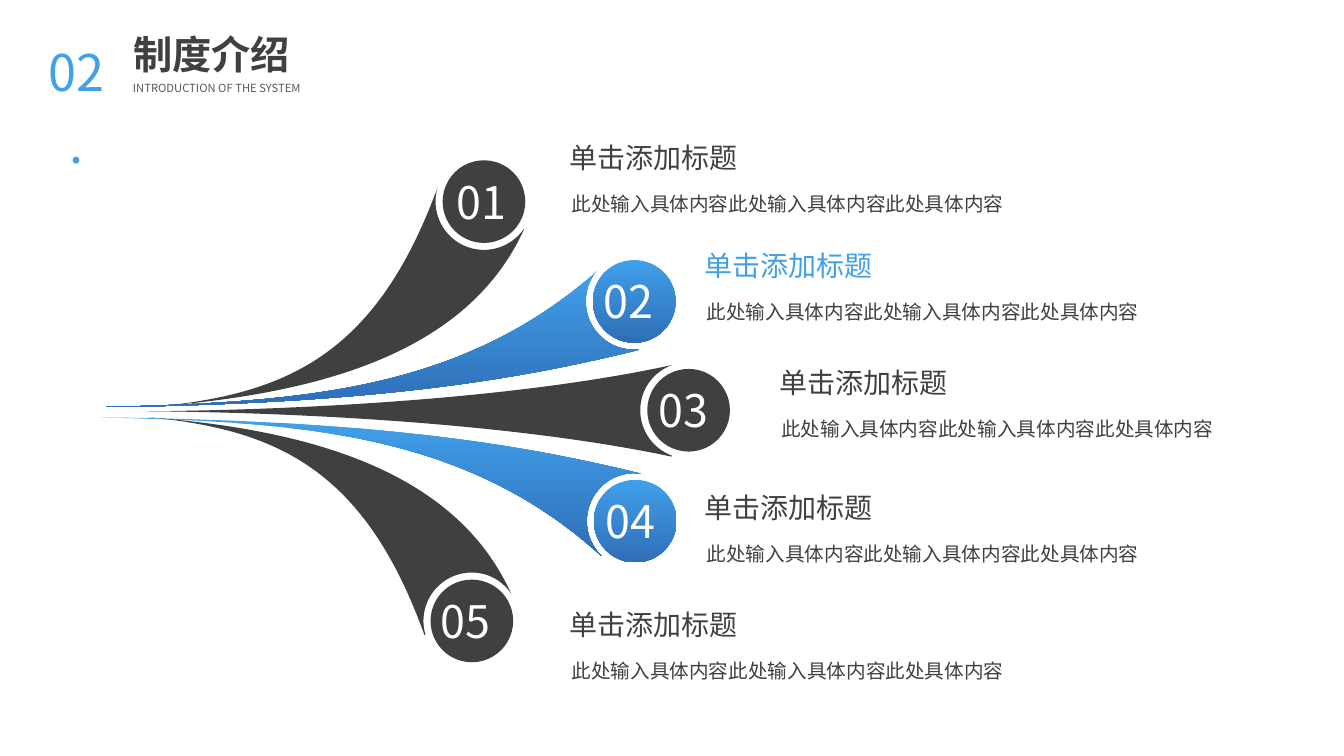
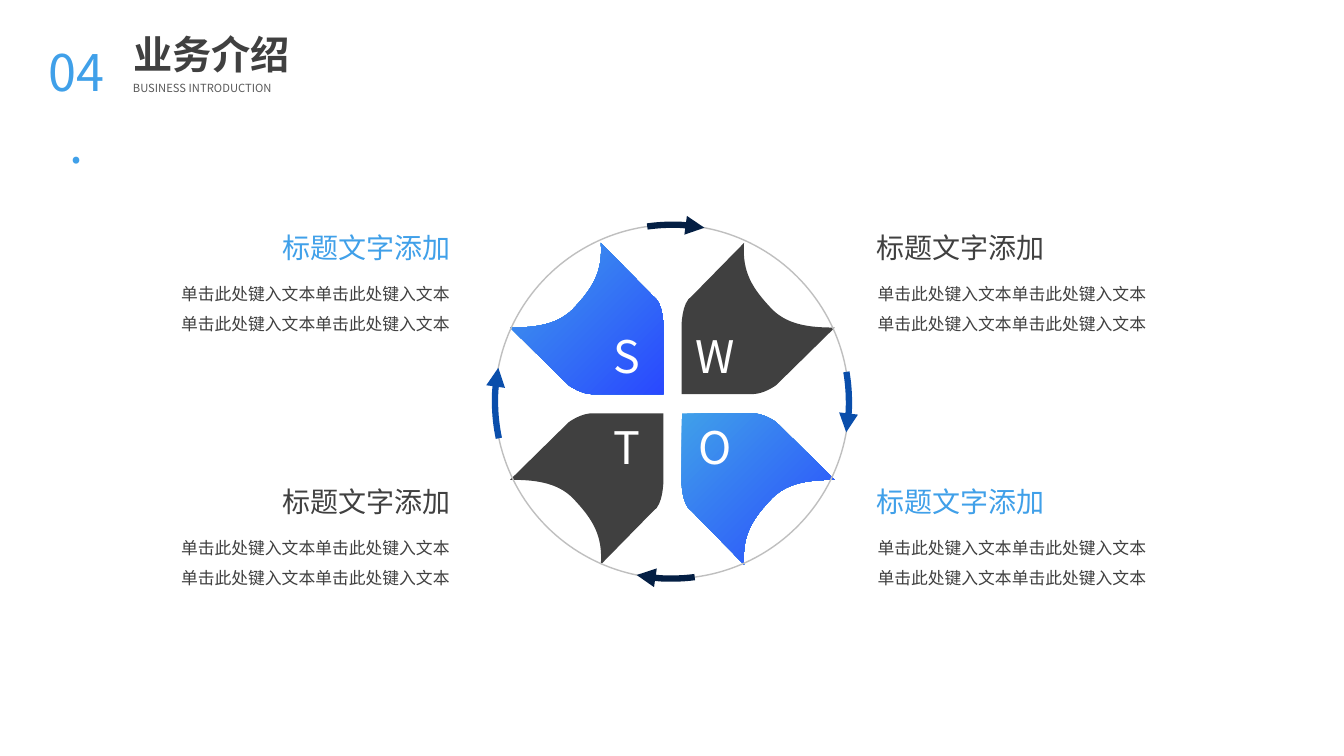
import math

import lxml.etree
import pptx
import pptx.dml.color
import pptx.enum.shapes
import pptx.enum.text
import pptx.oxml.ns
import pptx.util

SHAPE = pptx.enum.shapes.MSO_SHAPE
ALIGN = pptx.enum.text.PP_ALIGN
ANCHOR = pptx.enum.text.MSO_ANCHOR
qn = pptx.oxml.ns.qn

FONT = "Noto Sans CJK SC"
DARK, GREY, WHITE = "404040", "595959", "FFFFFF"
SKY, STEEL, ROYAL = "40A0E9", "2F6EB7", "2948FF"
RING, NAVY, COBALT = "BFBFBF", "041F44", "0A4EAB"
DOWN, DIAGONAL = 270, 315

prs = pptx.Presentation()
prs.slide_width = pptx.util.Inches(13.333)
prs.slide_height = pptx.util.Inches(7.5)
# Every length below counts columns and rows of a 1333 x 750 grid.
COL, ROW = prs.slide_width / 1333, prs.slide_height / 750


def paint(fill, *colours, angle=DOWN):
    """Fill solid with one colour, or with a gradient between two."""
    if len(colours) == 1:
        fill.solid()
        fill.fore_color.rgb = pptx.dml.color.RGBColor.from_string(colours[0])
        return
    fill.gradient()
    fill.gradient_angle = angle
    for stop, colour in zip(fill.gradient_stops, colours):
        stop.color.rgb = pptx.dml.color.RGBColor.from_string(colour)


def write(s, text, box, size, colour, align=ALIGN.LEFT, spacing=1.0,
          wrap=True, anchor=ANCHOR.TOP, title=False):
    """Put one styled paragraph in a text box or in the title placeholder."""
    sp = s.shapes.title if title else s.shapes.add_textbox(0, 0, 0, 0)
    x, y, w, h = box
    sp.left, sp.top = int(x * COL), int(y * ROW)
    sp.width, sp.height = int(w * COL), int(h * ROW)
    tf = sp.text_frame
    tf.text = text
    tf.word_wrap = wrap
    tf.auto_size = pptx.enum.text.MSO_AUTO_SIZE.NONE
    tf.vertical_anchor = anchor
    p = tf.paragraphs[0]
    p.alignment, p.line_spacing = align, spacing
    r = p.runs[0]
    r.font.size, r.font.bold = pptx.util.Pt(size), title
    r.font.name = "Arial" if title else FONT
    paint(r.font.fill, colour)
    lxml.etree.SubElement(r._r.get_or_add_rPr(), qn("a:ea"), typeface=FONT)


# Headers
slides = []
for number, title, subtitle in [
        ("02.", "制度介绍", "INTRODUCTION OF THE SYSTEM"),
        ("04.", "业务介绍", "BUSINESS INTRODUCTION")]:
    s = prs.slides.add_slide(prs.slide_layouts[5])
    write(s, title, (122, 25, 209, 57), 28, DARK, ALIGN.JUSTIFY, title=True)
    write(s, subtitle, (122, 76, 247, 24), 8, GREY, ALIGN.JUSTIFY)
    write(s, number, (33, 23.5, 86, 78), 36, SKY, ALIGN.CENTER, spacing=1.2)
    slides.append(s)
system, business = slides

# Outlines: a start point, then segments of one point (line) or three (curve)
outlines = []

# Ribbons: disc centre, number left, caption place, colours, then the lower
# edge to the tip and the upper edge back
DISC, GAP = 41, 48
branches = [
    ((480, 200), 443, (555, 138), [DARK],
     [(520, 227), (464, 351), (316, 390), (159, 403),
      (287, 390), (374, 350), (434, 186)]),
    ((629, 299), 589, (689, 245), [SKY, STEEL],
     [(634, 347), (516, 376), (374, 401), (96, 404),
      (284, 399), (453, 393), (592, 269)]),
    ((683, 407), 643, (763, 361), [DARK],
     [(666, 453), (501, 418), (276, 409), (147, 408),
      (276, 407), (502, 398), (667, 362)]),
    ((630, 517), 591, (689, 485), [SKY, STEEL],
     [(597, 552), (458, 425), (287, 419), (98, 414),
      (376, 417), (518, 441), (636, 470)]),
    ((468, 616), 427, (555, 601), [DARK],
     [(421, 630), (362, 466), (275, 426), (147, 414),
      (303, 426), (451, 465), (507, 589)]),
]
for (cx, cy), _, _, colours, edge in branches:
    # The wide end follows a circle round the disc, in two curves.
    upper, lower = [math.atan2(y - cy, x - cx) % math.tau
                    for x, y in (edge[-1], edge[0])]
    turn = (lower - upper) / 2
    reach = 4 / 3 * math.tan(turn / 4)
    segments = [edge[1:4], edge[4:7]]
    for a, b in [(upper, upper + turn), (upper + turn, lower)]:
        segments.append([
            (cx + GAP * (math.cos(t) - k * math.sin(t)),
             cy + GAP * (math.sin(t) + k * math.cos(t)))
            for t, k in [(a, reach), (b, -reach), (b, 0)]])
    outlines.append((system, colours, DOWN, edge[0], segments))

# Petals: one shape mirrored about the middle of the wheel
MID_X, MID_Y = 667, 400.5
petal = [
    [(161, 75.5)],
    [(103, 18.5)],
    [(103, 18.5), (90, 8.5), (77, 9.5)],
    [(9, 9.5)],
    [(9, 76.5)],
    [(9, 76.5), (9, 100.5), (19, 106.5)],
    [(71, 159.5)],
    [(69, 130.5), (79, 114.5), (99, 93.5)],
    [(115, 77.5), (138, 75.5), (161, 75.5)],
]
quarters = [  # letter, its box left and width, side, level, petal, heading
    ("S", 599, 48, -1, -1, [SKY, ROYAL], SKY),
    ("W", 680, 61, 1, -1, [DARK], DARK),
    ("O", 683, 57, 1, 1, [SKY, ROYAL], SKY),
    ("T", 599, 48, -1, 1, [DARK], DARK),
]
for _, _, _, side, level, colours, _ in quarters:
    mirrored = [[(MID_X + side * x, MID_Y + level * y) for x, y in segment]
                for segment in petal]
    outlines.append((business, colours, DIAGONAL, mirrored[0][0],
                     mirrored[1:]))

for s, colours, angle, start, segments in outlines:
    builder = s.shapes.build_freeform(round(start[0] * COL),
                                      round(start[1] * ROW))
    builder.add_line_segments([(round(x * COL), round(y * ROW))
                               for segment in segments for x, y in segment])
    sp = builder.convert_to_shape()
    # Lines that stand for the three points of a curve are joined into one.
    lines = iter(list(sp.element.iter(qn("a:lnTo"))))
    for segment in segments:
        group = [next(lines) for _ in segment]
        if len(group) == 3:
            curve = lxml.etree.Element(qn("a:cubicBezTo"))
            group[0].addprevious(curve)
            for line in group:
                curve.append(line[0])
                line.getparent().remove(line)
    sp.shadow.inherit = False
    sp.line.fill.background()
    paint(sp.fill, *colours, angle=angle)

# System slide: discs, numbers and captions
for i, ((cx, cy), number_x, (x, y), colours, _) in enumerate(branches, 1):
    sp = system.shapes.add_shape(
        SHAPE.OVAL, int((cx - DISC) * COL), int((cy - DISC) * ROW),
        int(2 * DISC * COL), int(2 * DISC * ROW))
    sp.shadow.inherit = False
    sp.line.fill.background()
    paint(sp.fill, *colours)
    write(system, f"{i:02}", (number_x, cy - 32, 73, 64), 32, WHITE, wrap=False)
    write(system, "单击添加标题", (x, y, 224, 41), 20, SKY if i == 2 else DARK,
          spacing=0.9, anchor=ANCHOR.MIDDLE)
    write(system, "此处输入具体内容此处输入具体内容此处具体内容",
          (x + 2, y + 36, 469, 42), 14, DARK, spacing=1.5)

# Business slide: ring, then four arrows given by start and end in degrees
ring_box = (int(491 * COL), int(223 * ROW), int(351 * COL), int(351 * ROW))
for span, colour, width in [
        (None, RING, 1),
        ((350.3, 9.97), COBALT, 4.5),
        ((82.62, 101.51), NAVY, 4.5),
        ((168.06, 191.02), COBALT, 4.5),
        ((261.97, 280.57), NAVY, 4.5)]:
    sp = business.shapes.add_shape(SHAPE.ARC if span else SHAPE.OVAL, *ring_box)
    sp.shadow.inherit = False
    sp.fill.background()
    paint(sp.line.fill, colour)
    sp.line.width = pptx.util.Pt(width)
    if span:
        for k, degrees in enumerate(span):
            sp.adjustments[k] = degrees * 0.6
        ln = sp.element.spPr.find(qn("a:ln"))
        lxml.etree.SubElement(ln, qn("a:tailEnd"), type="triangle")

for letter, x, w, side, level, _, colour in quarters:
    write(business, letter, (x, 321 if level < 0 else 411.5, w, 64), 32, WHITE,
          wrap=False)
    heading_x, body_x = (178, 159) if side < 0 else (859.5, 860.5)
    y = 223.5 if level < 0 else 475.5
    align = ALIGN.RIGHT if side < 0 else ALIGN.LEFT
    write(business, "标题文字添加", (heading_x, y, 279, 44), 20, colour, align)
    write(business, "单击此处键入文本" * 4, (body_x, y + 43, 297, 68), 12, DARK,
          align, spacing=1.5)

prs.save("out.pptx")
